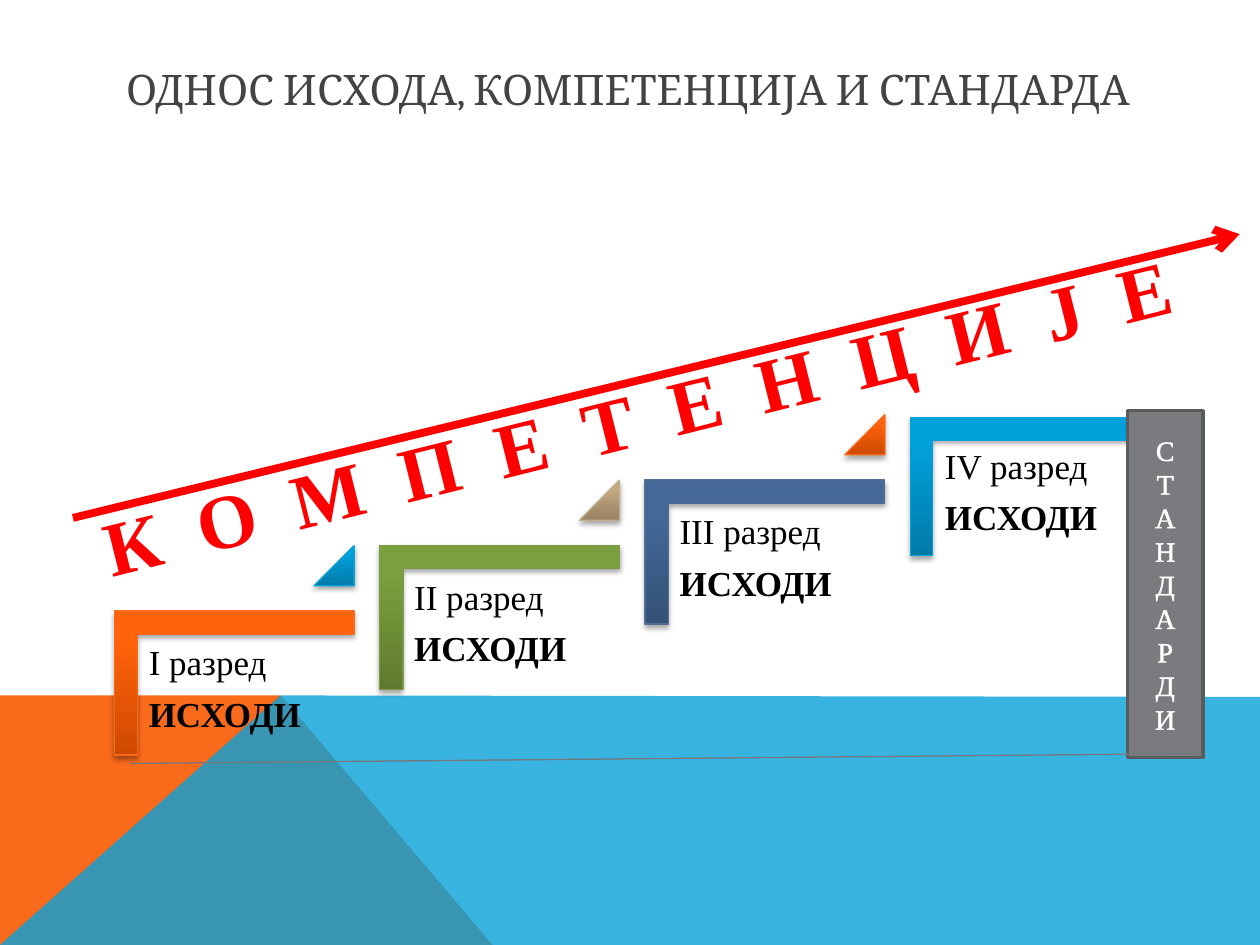
"""Build the slide on outcomes, competences and standards."""
from pptx import Presentation
from pptx.dml.color import RGBColor
from pptx.enum.shapes import MSO_CONNECTOR as Connector, MSO_SHAPE as Preset
from pptx.enum.text import MSO_ANCHOR as Anchor, PP_ALIGN as Align
from pptx.oxml import parse_xml
from pptx.oxml.ns import nsdecls, qn
from pptx.util import Cm, Pt


def color(value):
    return RGBColor.from_string(value)


class StairSlide:
    heading_font = "Cambria"
    body_font = "Times New Roman"

    def __init__(self, presentation):
        self.slide = presentation.slides.add_slide(presentation.slide_layouts[5])
        self.shapes = self.slide.shapes

    def format_runs(self, paragraph, size, hue, font=None, bold=False):
        for run in paragraph.runs:
            run.font.name = font or self.body_font
            run.font.size = Pt(size)
            run.font.bold = bold
            run.font.color.rgb = color(hue)

    def title(self, text, box):
        shape = self.shapes.title
        shape.left, shape.top, shape.width, shape.height = map(Cm, box)
        frame = shape.text_frame
        frame.text = text
        frame.vertical_anchor = Anchor.MIDDLE
        frame.paragraphs[0].alignment = Align.LEFT
        self.format_runs(frame.paragraphs[0], 24, "434342", self.heading_font)

    def band(self, points, hue, opacity=100):
        corners = [(Cm(x), Cm(y)) for x, y in points]
        builder = self.shapes.build_freeform(*corners[0])
        builder.add_line_segments(corners[1:])
        shape = builder.convert_to_shape()
        shape.shadow.inherit = False
        shape.fill.solid()
        shape.fill.fore_color.rgb = color(hue)
        shape.line.fill.background()
        if opacity < 100:
            fill = shape._element.spPr.find(qn("a:solidFill"))
            fill[0].append(parse_xml(f'<a:alpha {nsdecls("a")} val="{opacity * 1000}"/>'))

    def glossy(self, preset, box, palette, adjustments, rotation=0):
        dark, bright, edge = palette
        shape = self.shapes.add_shape(preset, *map(Cm, box))
        shape.rotation = rotation
        for index, value in enumerate(adjustments):
            shape.adjustments[index] = value
        shape.fill.gradient()
        shape.fill.gradient_angle = 90
        for stop, hue, position in zip(shape.fill.gradient_stops, (dark, bright), (0, 0.8)):
            stop.color.rgb = color(hue)
            stop.position = position
        shape.line.color.rgb = color(edge)
        shape.line.width = Pt(0.75)
        shape.shadow.inherit = False
        properties = shape._element.spPr
        properties.find(qn("a:gradFill")).set("rotWithShape", "0")
        properties.find(qn("a:effectLst")).append(parse_xml(
            f'<a:outerShdw {nsdecls("a")} blurRad="{Pt(3.1)}" dist="{Pt(1.8)}" dir="5400000" '
            'rotWithShape="0"><a:srgbClr val="000000"><a:alpha val="35000"/></a:srgbClr>'
            '</a:outerShdw>'))

    def grade_label(self, grade, box):
        frame = self.shapes.add_textbox(*map(Cm, box)).text_frame
        frame.word_wrap = True
        frame.margin_left = frame.margin_right = Cm(0.21)
        frame.margin_top = frame.margin_bottom = Cm(0.21)
        frame.text = f"{grade} разред\nИСХОДИ"
        for paragraph, bold in zip(frame.paragraphs, (False, True)):
            paragraph.line_spacing = 0.9
            paragraph.space_after = Pt(8)
            self.format_runs(paragraph, 20, "000000", bold=bold)

    def spaced_text(self, word, box, rotation):
        shape = self.shapes.add_textbox(*map(Cm, box))
        shape.rotation = rotation
        frame = shape.text_frame
        frame.word_wrap = True
        frame.margin_left = Cm(0.64)
        frame.text = " ".join(word)
        paragraph = frame.paragraphs[0]
        self.format_runs(paragraph, 44, "FF0000", bold=True)
        paragraph.runs[0].font._element.set("spc", "550")

    def line(self, start, end, hue, width, arrow=False):
        connector = self.shapes.add_connector(Connector.STRAIGHT, *map(Cm, start + end))
        connector.line.color.rgb = color(hue)
        connector.line.width = Pt(width)
        connector._element.spPr.append(parse_xml(f'<a:effectLst {nsdecls("a")}/>'))
        if arrow:
            connector.line._get_or_add_ln().append(
                parse_xml(f'<a:tailEnd {nsdecls("a")} type="arrow"/>'))

    def pillar(self, word, box):
        shape = self.shapes.add_shape(Preset.RECTANGLE, *map(Cm, box))
        shape.shadow.inherit = False
        shape.fill.solid()
        shape.fill.fore_color.rgb = color("797B7E")
        shape.line.color.rgb = color("5A5B5D")
        shape.line.width = Pt(2)
        frame = shape.text_frame
        frame.vertical_anchor = Anchor.MIDDLE
        frame.text = "\n".join(word)
        for paragraph in frame.paragraphs:
            paragraph.alignment = Align.CENTER
            self.format_runs(paragraph, 16, "FFFFFF")
            paragraph.runs[0].font._element.insert(0, parse_xml(
                f'<a:ln {nsdecls("a")} w="{Pt(1.45)}"><a:solidFill>'
                '<a:srgbClr val="FFFFFF"/></a:solidFill></a:ln>'))


def main():
    presentation = Presentation()
    presentation.slide_width, presentation.slide_height = Cm(25.4), Cm(19.05)
    stairs = StairSlide(presentation)

    stairs.band([(0, 19.05), (0, 14.02), (5.66, 14.02), (9.93, 19.05)], "F96A1B")
    stairs.band([(0, 19.05), (5.66, 14.02), (25.4, 14.05), (25.4, 19.05)], "08A1D9", 80)
    stairs.title("ОДНОС ИСХОДА, КОМПЕТЕНЦИЈА И СТАНДАРДА", (2.29, 1.02, 20.88, 1.52))

    orange = ("CE4900", "FF630C", "F96A1B")
    blue = ("007BA8", "00A0DA", "08A1D9")
    green = ("5F7A2E", "7B9F3C", "7C984A")
    tan = ("978263", "C4A981", "C2AD8D")
    navy = ("345176", "446999", "506E94")
    steps = [
        ("I", orange, 2.9, blue),
        ("II", green, 2.9, tan),
        ("III", navy, 2.9, orange),
        ("IV", blue, 2.77, None),
    ]
    length = 4.83
    for index, (grade, palette, depth, marker) in enumerate(steps):
        x, y = 4.72 + 5.35 * index, 13.77 - 1.32 * index
        corner = (x - depth / 2, y - length / 2, depth, length)
        stairs.glossy(Preset.CORNER, corner, palette, (0.161, 0.161), 90)
        stairs.grade_label(grade, (x - 1.93, y - 0.97, 4.37, 3.84))
        if marker:
            triangle = (x + 1.61, y - 2.77, 0.81, 0.81)
            stairs.glossy(Preset.ISOSCELES_TRIANGLE, triangle, marker, (1,))

    stairs.spaced_text("КОМПЕТЕНЦИЈЕ", (1.14, 7.21, 24.16, 2.13), 346)
    stairs.line((1.47, 10.44), (24.99, 4.72), "FF0000", 4.5, arrow=True)
    stairs.pillar("СТАНДАРДИ", (22.73, 8.28, 1.52, 6.99))
    stairs.line((2.62, 15.39), (24.23, 15.19), "76787B", 0.75)
    presentation.save("out.pptx")


if __name__ == "__main__":
    main()
